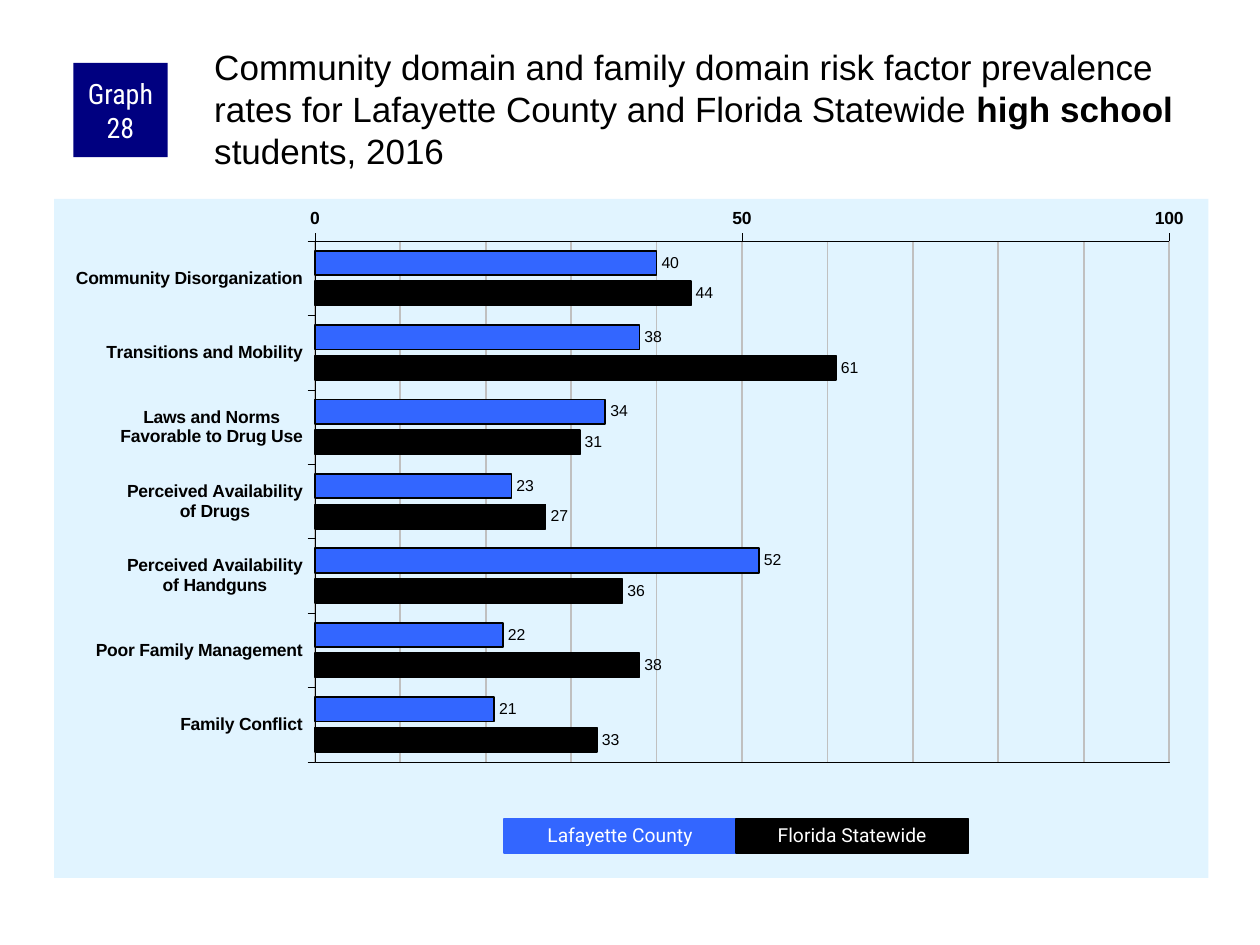
"""Build the slide on high school risk factor prevalence rates."""
from copy import deepcopy
from lxml.etree import SubElement
from pptx import Presentation
from pptx.chart.data import CategoryChartData
from pptx.dml.color import RGBColor
from pptx.enum.chart import XL_AXIS_CROSSES, XL_CHART_TYPE, XL_LABEL_POSITION, XL_TICK_MARK
from pptx.enum.shapes import MSO_SHAPE
from pptx.enum.text import MSO_ANCHOR, PP_ALIGN
from pptx.oxml import parse_xml
from pptx.oxml.ns import nsdecls, qn
from pptx.util import Cm, Pt


def paint(target, color):
    if hasattr(target, "solid"):
        target.solid()
        target.fore_color.rgb = RGBColor.from_string(color)
    else:
        target.rgb = RGBColor.from_string(color)


def write(para, text, font="Arial", size=20, color="000000", bold=False):
    span = para.add_run()
    span.text = text
    span.font.name = font
    span.font.size = Pt(size)
    span.font.bold = bold
    paint(span.font.color, color)


groups = [
    ("Lafayette County", "3366FF", (40, 38, 34, 23, 52, 22, 21)),
    ("Florida Statewide", "000000", (44, 61, 31, 27, 36, 38, 33)),
]

deck = Presentation()
deck.slide_width = Cm(25.4)
deck.slide_height = Cm(19.05)
page = deck.slides.add_slide(deck.slide_layouts[6])

data = CategoryChartData()
data.categories = [
    "Community Disorganization",
    "Transitions and Mobility",
    "Laws and Norms\nFavorable to Drug Use",
    "Perceived Availability\nof Drugs",
    "Perceived Availability\nof Handguns",
    "Poor Family Management",
    "Family Conflict",
]
for name, color, rates in groups:
    data.add_series(name, rates)
chart = page.shapes.add_chart(
    XL_CHART_TYPE.BAR_CLUSTERED, Cm(1.09), Cm(4.01), Cm(23.27), Cm(13.69), data
).chart
chart.has_legend = False
chart.has_title = False
chart.font.name = "Arial"
chart.font.size = Pt(11.8)
paint(chart.font.color, "000000")

plot = chart.plots[0]
plot.gap_width = 80
plot.overlap = -25
plot.vary_by_categories = False
for series, (name, color, rates) in zip(plot.series, groups):
    paint(series.format.fill, color)
    paint(series.format.line.color, "000000")
    series.format.line.width = Pt(1)
    labels = series.data_labels
    labels.show_value = True
    labels.position = XL_LABEL_POSITION.OUTSIDE_END
    labels.font.name = "Arial"
    labels.font.size = Pt(9)
    paint(labels.font.color, "000000")

for axis in (chart.category_axis, chart.value_axis):
    axis.major_tick_mark = XL_TICK_MARK.OUTSIDE
    axis.minor_tick_mark = XL_TICK_MARK.NONE
    axis.format.line.width = Pt(0.25)
    paint(axis.format.line.color, "000000")
    labels_font = axis.tick_labels.font
    labels_font.name = "Arial"
    labels_font.size = Pt(10)
    labels_font.bold = True
    paint(labels_font.color, "000000")
chart.category_axis.reverse_order = True
chart.category_axis.crosses = XL_AXIS_CROSSES.MAXIMUM

rate_axis = chart.value_axis
rate_axis.minimum_scale = 0
rate_axis.maximum_scale = 100
rate_axis.major_unit = 50
rate_axis.minor_unit = 10
rate_axis.has_major_gridlines = True
rate_axis.has_minor_gridlines = True
grid_line = rate_axis.major_gridlines.format.line
grid_line.width = Pt(1)
paint(grid_line.color, "C0C0C0")
major_grid = chart.element.find(".//" + qn("c:majorGridlines"))
minor_grid = chart.element.find(".//" + qn("c:minorGridlines"))
minor_grid.append(deepcopy(major_grid[0]))

chart.element.find(qn("c:txPr")).addprevious(parse_xml(
    f'<c:spPr {nsdecls("c", "a")}><a:solidFill><a:srgbClr val="E1F4FF"/></a:solidFill>'
    '<a:ln><a:noFill/></a:ln></c:spPr>'
))
area = chart.element.find(".//" + qn("c:plotArea"))
area.append(parse_xml(
    f'<c:spPr {nsdecls("c", "a")}><a:noFill/><a:ln w="3175"><a:solidFill>'
    '<a:srgbClr val="000000"/></a:solidFill></a:ln></c:spPr>'
))
for layout in area.findall(qn("c:layout")):
    area.remove(layout)
layout = parse_xml(f'<c:layout {nsdecls("c")}><c:manualLayout/></c:layout>')
area.insert(0, layout)
for tag, value in (
    ("layoutTarget", "inner"), ("xMode", "edge"), ("yMode", "edge"),
    ("x", "0.226"), ("y", "0.062"), ("w", "0.74"), ("h", "0.767"),
):
    SubElement(layout[0], qn("c:" + tag)).set("val", value)

badge = page.shapes.add_shape(MSO_SHAPE.RECTANGLE, Cm(1.48), Cm(1.27), Cm(1.9), Cm(1.9))
badge.shadow.inherit = False
paint(badge.fill, "000080")
badge.line.fill.background()
frame = badge.text_frame
frame.word_wrap = True
frame.vertical_anchor = MSO_ANCHOR.MIDDLE
frame.margin_left = frame.margin_right = Cm(0.13)
frame.margin_top = frame.margin_bottom = 0
frame.paragraphs[0].alignment = PP_ALIGN.CENTER
write(frame.paragraphs[0], "Graph 28", font="Roboto Condensed", size=16, color="FFFFFF")

title = page.shapes.add_textbox(Cm(4.24), Cm(0.84), Cm(20.12), Cm(2.11)).text_frame
title.word_wrap = True
title.margin_left = title.margin_top = Cm(0.08)
title.margin_right = title.margin_bottom = 0
para = title.paragraphs[0]
write(para, "Community domain and family domain risk factor prevalence rates "
            "for Lafayette County and Florida Statewide ")
write(para, "high school", bold=True)
write(para, " students, 2016")

key_width = 4.68
for index, (name, color, rates) in enumerate(groups):
    key = page.shapes.add_shape(
        MSO_SHAPE.RECTANGLE, Cm(10.16 + index * key_width), Cm(16.51), Cm(key_width), Cm(0.69)
    )
    key.shadow.inherit = False
    paint(key.fill, color)
    paint(key.line.color, color)
    key.line.width = Pt(0.75)
    key.text_frame.word_wrap = True
    para = key.text_frame.paragraphs[0]
    para.alignment = PP_ALIGN.CENTER
    para.line_spacing = 0.9
    write(para, name, font="Roboto", size=11, color="FFFFFF")

deck.save("out.pptx")
